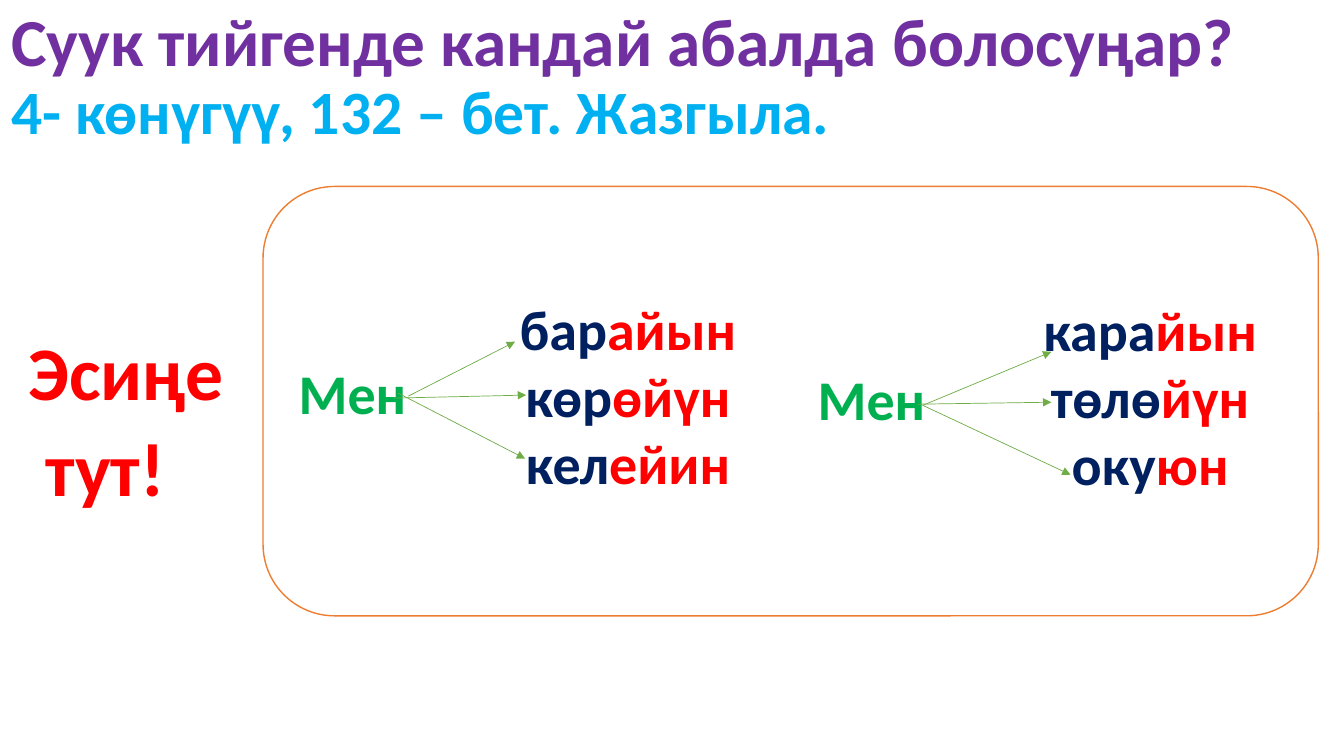
from pptx import Presentation
from pptx.util import Pt
from pptx.dml.color import RGBColor
from pptx.enum.shapes import MSO_CONNECTOR as CONN, MSO_SHAPE as SHAPE
from pptx.enum.text import MSO_ANCHOR as ANCHOR, PP_ALIGN as ALIGN
from pptx.oxml.ns import qn
from lxml.etree import SubElement

COLORS = {
    "purple": "7030A0", "blue": "00B0F0", "red": "FF0000", "navy": "002060",
    "green": "00B050", "arrow": "70AD47", "frame": "ED7D31", "white": "FFFFFF",
}


def rgb(name):
    return RGBColor.from_string(COLORS[name])


def add_text(s, box, lines, align=ALIGN.LEFT, anchor=ANCHOR.TOP,
             spacing=1.0, before=0, indents=()):
    """Each line is a list of (text, size, color) runs."""
    tf = s.shapes.add_textbox(*map(Pt, box)).text_frame
    tf.word_wrap, tf.vertical_anchor = True, anchor
    for i, runs in enumerate(lines):
        p = tf.paragraphs[0] if i == 0 else tf.add_paragraph()
        p.alignment, p.line_spacing = align, spacing
        p.space_before = Pt(before if i else 0)
        if indents:
            p._p.get_or_add_pPr().set("marL", str(Pt(indents[i])))
        for text, size, color in runs:
            r = p.add_run()
            r.text = text
            r.font.name, r.font.size, r.font.bold = "Calibri", Pt(size), True
            r.font.color.rgb = rgb(color)


def add_arrow(s, x1, y1, x2, y2):
    c = s.shapes.add_connector(CONN.STRAIGHT, Pt(x1), Pt(y1), Pt(x2), Pt(y2))
    c.line.color.rgb, c.line.width = rgb("arrow"), Pt(0.5)
    SubElement(c.line._get_or_add_ln(), qn("a:tailEnd"), type="triangle")
    SubElement(c._element.spPr, qn("a:effectLst"))


def add_title(s, box):
    add_text(s, box, [
        [("Суук тийгенде кандай абалда болосуңар?", 48, "purple")],
        [("4- көнүгүү, 132 – бет. Жазгыла.", 44, "blue")],
    ], anchor=ANCHOR.MIDDLE, spacing=0.9)


def add_reminder(s, box):
    add_text(s, box, [[("Эсиңе", 54, "red")], [("тут!", 54, "red")]],
             spacing=0.9, before=10, indents=(12.2, 24.4))


def add_frame(s, box):
    sp = s.shapes.add_shape(SHAPE.ROUNDED_RECTANGLE, *map(Pt, box))
    sp.shadow.inherit = False
    sp.fill.solid()
    sp.fill.fore_color.rgb = rgb("white")
    sp.line.color.rgb, sp.line.width = rgb("frame"), Pt(1)


def add_verbs(s, box, pronoun_y, words_x, words, arrows):
    """Pronoun at the left, verb forms at the right, arrows between them."""
    x, y, w, h = box
    add_text(s, (x + words_x, y, w - words_x, h),
             [[(stem, 40, "navy"), (ending, 40, "red")] for stem, ending in words],
             align=ALIGN.CENTER)
    add_text(s, (x, y + pronoun_y, 108, 56), [[("Мен", 40, "green")]])
    for x1, y1, x2, y2 in arrows:
        add_arrow(s, x + x1, y + y1, x + x2, y + y2)


def main():
    prs = Presentation()
    prs.slide_width, prs.slide_height = Pt(960), Pt(540)
    s = prs.slides.add_slide(prs.slide_layouts[6])

    # Heading and reminder
    add_title(s, (1, 0, 959, 111.6))
    add_reminder(s, (1.2, 236.2, 185, 140))

    # Framed verb forms
    add_frame(s, (187.9, 133.2, 753.8, 306.7))
    add_verbs(s, (206.3, 206.6, 331.5, 153), 46, 153,
              [("бар", "айын"), ("көр", "өйүн"), ("кел", "ейин")],
              [(85.3, 76.4, 161.6, 37.5), (74.5, 77.8, 169.5, 75.6),
               (78.1, 74.2, 168.8, 121)])
    add_verbs(s, (577, 207.4, 364.8, 153), 49.6, 124.3,
              [("кара", "йын"), ("төлө", "йүн"), ("оку", "юн")],
              [(82.5, 82, 174, 43.9), (78.9, 81.3, 174, 79.9),
               (80.4, 81.3, 187.7, 131.7)])

    prs.save("out.pptx")


if __name__ == "__main__":
    main()
